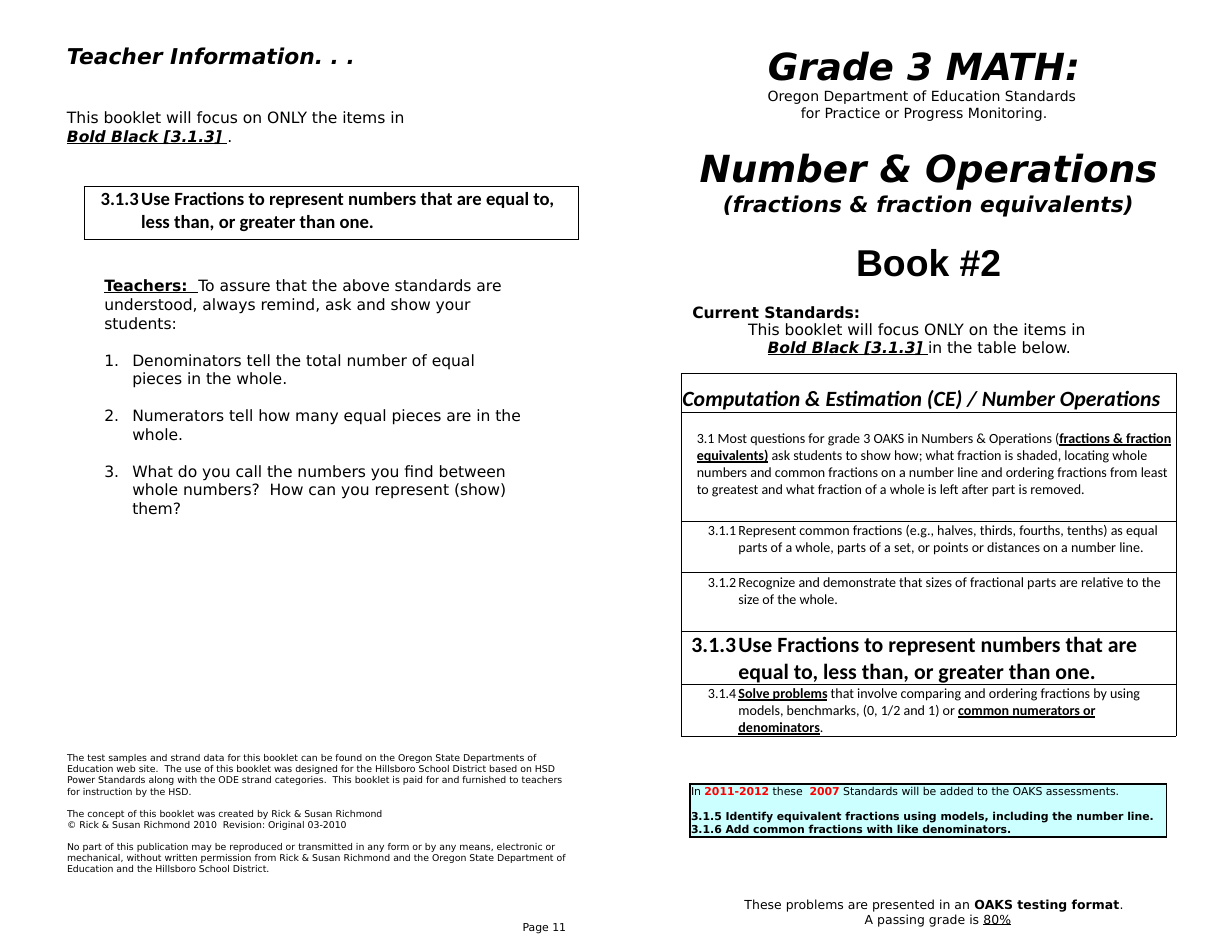
import pptx
import pptx.util
import pptx.dml.color
import pptx.enum.text
import pptx.oxml
import pptx.oxml.ns
import lxml.etree

Pt = pptx.util.Pt
Align = pptx.enum.text.PP_ALIGN
Anchor = pptx.enum.text.MSO_ANCHOR
color = pptx.dml.color.RGBColor.from_string


def write(frame, paragraphs, size, font="DejaVu Sans", align=Align.LEFT):
    frame.word_wrap = True
    for index, pieces in enumerate(paragraphs):
        para = frame.paragraphs[0] if index == 0 else frame.add_paragraph()
        para.alignment = align
        for text, style, *own_size in pieces:
            span = para.add_run()
            span.text = text
            span.font.name = font
            span.font.size = Pt(own_size[0] if own_size else size)
            span.font.bold = "b" in style
            span.font.italic = "i" in style
            span.font.underline = "u" in style
            span.font.color.rgb = color("FF0000" if "r" in style else "000000")


def format_cell(cell, sides, width):
    cell.margin_left = cell.margin_right = cell.margin_top = Pt(0.72)
    cell.margin_bottom = 0
    cell.fill.background()
    properties = cell._tc.get_or_add_tcPr()
    for position, side in enumerate("LRTB"):
        if side in sides:
            fill = '<a:solidFill><a:srgbClr val="000000"/></a:solidFill>'
        else:
            fill = "<a:noFill/>"
        line = pptx.oxml.parse_xml(
            f'<a:ln{side} {pptx.oxml.ns.nsdecls("a")} w="{Pt(width)}">{fill}</a:ln{side}>')
        properties.insert(position, line)


deck = pptx.Presentation()
deck.slide_width, deck.slide_height = Pt(792), Pt(612)
page = deck.slides.add_slide(deck.slide_layouts[5])

title = page.shapes.title
title.left, title.top, title.width, title.height = Pt(438), Pt(24), Pt(312), Pt(58)
title.text_frame.vertical_anchor = Anchor.TOP
title.text_frame.auto_size = pptx.enum.text.MSO_AUTO_SIZE.NONE
write(title.text_frame, [
    [("Grade 3 MATH:", "bi", 24)],
    [("Oregon Department of Education Standards ", "")],
    [("for Practice or Progress Monitoring.", "")],
], 9, align=Align.CENTER)

boxes = [
    ((438, 90, 318, 53), 24, "DejaVu Sans", Align.CENTER, 0, [
        [("Number & Operations ", "bi"), ("(fractions & fraction equivalents)", "bi", 14)]]),
    ((438, 150, 318, 36), 24, "Arial", Align.CENTER, 0, [[("Book #2", "b")]]),
    ((438, 191, 282, 19), 10, "DejaVu Sans", Align.LEFT, 0, [[("Current Standards:", "b")]]),
    ((450, 202, 282, 32), 10, "DejaVu Sans", Align.CENTER, 0, [
        [("This booklet will focus ONLY on the items in ", "")],
        [("Bold Black [3.1.3] ", "biu"), ("in the table below.", "")]]),
    ((456, 573, 294, 27), 8, "DejaVu Sans", Align.CENTER, 0, [
        [("These problems are presented in an ", ""), ("OAKS testing format", "b"), (".  ", "")],
        [("A passing grade is ", ""), ("80%", "u")]]),
    ((36, 24, 282, 24), 14, "DejaVu Sans", Align.LEFT, 0, [[("Teacher Information. . .", "bi")]]),
    ((36, 66, 282, 32), 10, "DejaVu Sans", Align.LEFT, 0, [
        [("This booklet will focus on ONLY the items in", "")],
        [("Bold Black [3.1.3] ", "biu"), (".", "")]]),
    ((60, 174, 282, 165), 10, "DejaVu Sans", Align.LEFT, 11.7, [
        [("Teachers:  ", "bu"),
         ("To assure that the above standards are understood, always remind, ask and show "
          "your students:", "")],
        [("Denominators tell the total number of equal pieces in the whole.", "")],
        [("Numerators tell how many equal pieces are in the whole.", "")],
        [("What do you call the numbers you find between whole numbers?  How can you "
          "represent (show) them?", "")]]),
    ((36, 480, 336, 87), 6, "DejaVu Sans", Align.LEFT, 7, [
        [("The test samples and strand data for this booklet can be found on the Oregon State "
          "Departments of Education web site.  The use of this booklet was designed for the "
          "Hillsboro School District based on HSD Power Standards along with the ODE strand "
          "categories.  This booklet is paid for and furnished to teachers for instruction by "
          "the HSD.", "")],
        [("The concept of this booklet was created by Rick & Susan Richmond", "")],
        [("© Rick & Susan Richmond 2010  Revision: Original 03-2010", "")],
        [("No part of this publication may be reproduced or transmitted in any form or by any "
          "means, electronic or mechanical, without written permission from Rick & Susan "
          "Richmond and the Oregon State Department of Education and the Hillsboro School "
          "District.", "")]]),
    ((312, 588, 59, 22), 7, "DejaVu Sans", Align.RIGHT, 0, [[("Page 11", "")]]),
]
for place, size, font, align, gap, paragraphs in boxes:
    box = page.shapes.add_textbox(*map(Pt, place))
    write(box.text_frame, paragraphs, size, font, align)
    for para in box.text_frame.paragraphs[1:]:
        if not para.text.startswith("©"):
            para.space_before = Pt(gap)
        if paragraphs[0][0][0].startswith("Teachers:"):
            properties = para._p.get_or_add_pPr()
            properties.set("marL", str(Pt(18)))
            properties.set("indent", str(Pt(-18)))
            number = lxml.etree.SubElement(properties, pptx.oxml.ns.qn("a:buAutoNum"))
            number.set("type", "arabicPeriod")

fractions = "Use Fractions to represent numbers that are equal to, less than, or greater than one."
standards = [
    (25, 14, [("Computation & Estimation (CE) / Number Operations", "bi")]),
    (70, 9, [
        ("3.1 Most questions for grade 3 OAKS in Numbers & Operations (", ""),
        ("fractions & fraction equivalents)", "bu"),
        (" ask students to show how; what fraction is shaded, locating whole numbers and common "
         "fractions on a number line and ordering fractions from least to greatest and what "
         "fraction of a whole is left after part is removed.", "")]),
    (33.2, 9, [("3.1.1", "")], [
        ("Represent common fractions (e.g., halves, thirds, fourths, tenths) as equal parts of a "
         "whole, parts of a set, or points or distances on a number line.", "")]),
    (37.4, 9, [("3.1.2", "")], [
        ("Recognize and demonstrate that sizes of fractional parts are relative to the size of "
         "the whole.", "")]),
    (34, 14, [("3.1.3", "b")], [(fractions, "b")]),
    (29, 9, [("3.1.4", "")], [
        ("Solve problems", "bu"),
        (" that involve comparing and ordering fractions by using models, benchmarks, "
         "(0, 1/2 and 1) or ", ""),
        ("common numerators or denominators", "bu"), (".", "")]),
]
focus = [(34, 12, [("3.1.3", "b")], [(fractions, "b")])]

for left, top, rows in [(438, 240, standards), (54, 120, focus)]:
    height = sum(row[0] for row in rows)
    table = page.shapes.add_table(len(rows), 2, Pt(left), Pt(top), Pt(318), Pt(height)).table
    table.first_row = table.horz_banding = False
    table.columns[0].width, table.columns[1].width = Pt(36), Pt(282)
    for index, (row_height, size, *texts) in enumerate(rows):
        table.rows[index].height = Pt(row_height)
        first, second = table.cell(index, 0), table.cell(index, 1)
        merged = len(texts) == 1
        format_cell(first, "LRTB" if merged else "LTB", 0.5)
        format_cell(second, "RTB", 0.5)
        if merged:
            first.merge(second)
            write(first.text_frame, texts, size, "Calibri")
        else:
            write(first.text_frame, texts[:1], size, "Calibri", Align.RIGHT)
            write(second.text_frame, texts[1:], size, "Calibri")
    if rows is standards:
        table.cell(0, 0).vertical_anchor = Anchor.BOTTOM
        table.cell(1, 0).margin_left = Pt(10)
        table.cell(1, 0).margin_top = Pt(11.7)

notice = page.shapes.add_table(1, 1, Pt(443.5), Pt(504), Pt(306.5), Pt(34)).table
notice.first_row = notice.horz_banding = False
cell = notice.cell(0, 0)
format_cell(cell, "LRTB", 1)
cell.fill.solid()
cell.fill.fore_color.rgb = color("CCFFFF")
write(cell.text_frame, [
    [("In ", ""), ("2011-2012", "br"), (" these  ", ""), ("2007", "br"),
     (" Standards will be added to the OAKS assessments.", "")],
    [("3.1.5 Identify equivalent fractions using models, including the number line.", "b")],
    [("3.1.6 Add common fractions with like denominators.", "b")],
], 7)
cell.text_frame.paragraphs[1].space_before = Pt(8.2)

deck.save("out.pptx")
